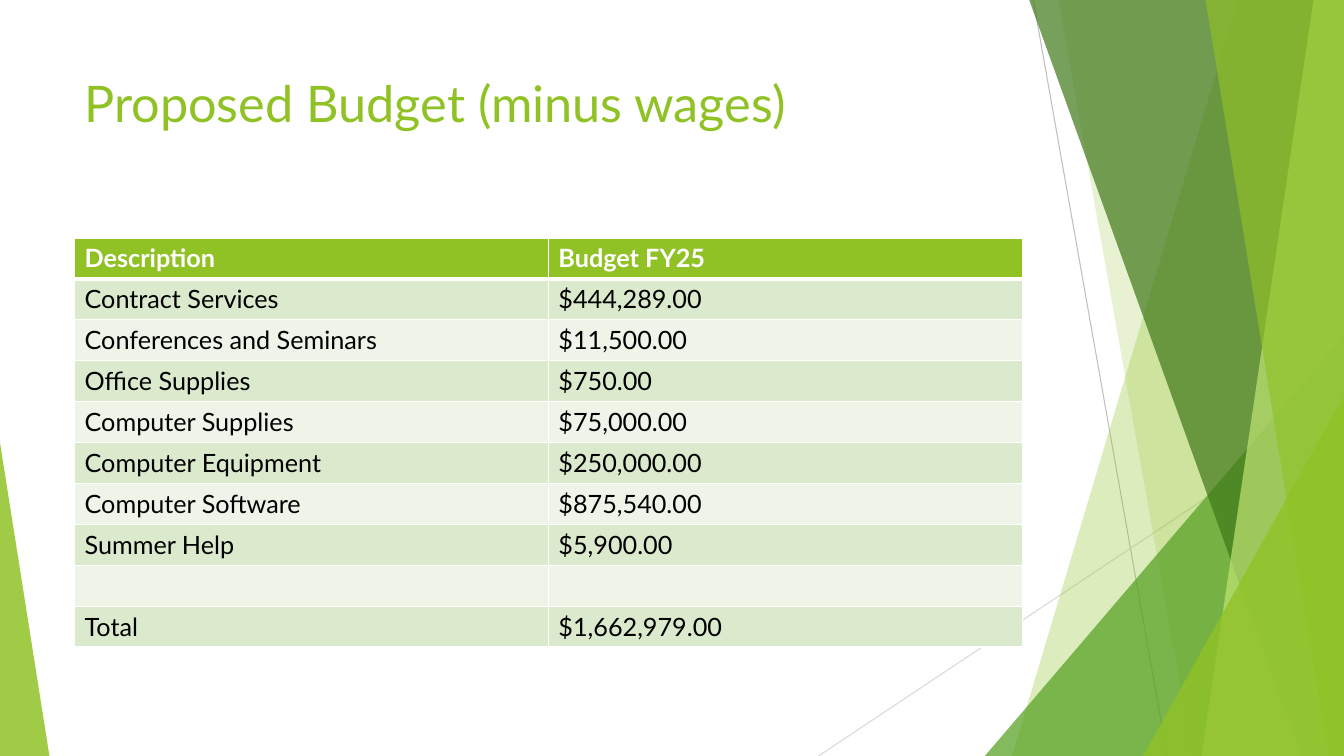
from dataclasses import dataclass

from pptx import Presentation
from pptx import util as u
from pptx.dml.color import RGBColor
from pptx.enum import shapes, text
from pptx.oxml import ns, xmlchemy


@dataclass(frozen=True)
class Theme:
    font: str = "Lato"
    title_size: float = 36
    body_size: float = 18
    hairline: float = 0.75
    rule: float = 1
    header_rule: float = 3
    accent: str = "90C226"
    leaf: str = "54A021"
    forest: str = "3F7819"
    lime: str = "C0E474"
    dark_gray: str = "BFBFBF"
    light_gray: str = "D9D9D9"
    white: str = "FFFFFF"
    black: str = "000000"
    bands: tuple = ("DBE9CD", "EEF4E8")


class SlideBuilder:
    """Draws on one slide; every place and size is a percentage of the slide."""

    def __init__(self, deck, theme):
        self.deck, self.theme = deck, theme
        self.slide = deck.slides.add_slide(deck.slide_layouts[6])
        self.items = self.slide.shapes

    def x(self, share):
        return round(self.deck.slide_width * share / 100)

    def y(self, share):
        return round(self.deck.slide_height * share / 100)

    def box(self, left, top, width, height):
        return self.x(left), self.y(top), self.x(width), self.y(height)

    def paint(self, facet, color, opacity):
        facet.shadow.inherit = False
        facet.fill.solid()
        facet.fill.fore_color.rgb = RGBColor.from_string(color)
        facet.line.fill.background()
        tint = facet.element.spPr.find(".//" + ns.qn("a:srgbClr"))
        alpha = xmlchemy.OxmlElement("a:alpha")
        alpha.set("val", str(opacity * 1000))
        tint.append(alpha)

    def band(self, top_left, bottom_left, color, opacity):
        """Full-height facet with a slanted left side, reaching the right edge."""
        outline = self.items.build_freeform(self.x(top_left), 0)
        corners = [(100, 0), (100, 100), (bottom_left, 100)]
        outline.add_line_segments([(self.x(h), self.y(v)) for h, v in corners])
        self.paint(outline.convert_to_shape(), color, opacity)

    def corner(self, left, top, width, apex, color, opacity):
        """Triangle standing on the bottom edge; apex 0 is left, 1 is right."""
        facet = self.items.add_shape(shapes.MSO_SHAPE.ISOSCELES_TRIANGLE,
                                     *self.box(left, top, width, 100 - top))
        facet.adjustments[0] = apex
        self.paint(facet, color, opacity)

    def line(self, start, end, color):
        ray = self.items.add_connector(shapes.MSO_CONNECTOR.STRAIGHT,
                                       self.x(start[0]), self.y(start[1]),
                                       self.x(end[0]), self.y(end[1]))
        ray.line.color.rgb = RGBColor.from_string(color)
        ray.line.width = u.Pt(self.theme.hairline)
        ray.element.spPr.append(xmlchemy.OxmlElement("a:effectLst"))

    def put_text(self, frame, words, size, color, bold=False):
        paragraph = frame.paragraphs[0]
        paragraph.alignment = text.PP_ALIGN.LEFT
        font = paragraph.font
        if words:
            run = paragraph.add_run()
            run.text = words
            font = run.font
            font.color.rgb = RGBColor.from_string(color)
        look = {"name": self.theme.font, "size": u.Pt(size), "bold": bold}
        for key, value in look.items():
            setattr(font, key, value)

    def title(self, words, *place):
        frame = self.items.add_textbox(*self.box(*place)).text_frame
        layout = {"word_wrap": True, "vertical_anchor": text.MSO_ANCHOR.TOP}
        for key, value in layout.items():
            setattr(frame, key, value)
        self.put_text(frame, words, self.theme.title_size, self.theme.accent)

    def border(self, cell, widths):
        """Add white cell borders; widths run left, right, top, bottom."""
        properties = cell._tc.get_or_add_tcPr()
        for place, (side, width) in enumerate(zip("LRTB", widths)):
            edge = xmlchemy.OxmlElement(f"a:ln{side}")
            edge.set("w", str(u.Pt(width)))
            fill = xmlchemy.OxmlElement("a:solidFill")
            tint = xmlchemy.OxmlElement("a:srgbClr")
            tint.set("val", self.theme.white)
            fill.append(tint)
            edge.append(fill)
            properties.insert(place, edge)

    def table(self, rows, *place):
        theme = self.theme
        grid = self.items.add_table(len(rows), len(rows[0]),
                                    *self.box(*place)).table
        for r, row in enumerate(rows):
            header = r == 0
            fill = theme.accent if header else theme.bands[(r - 1) % 2]
            top = theme.header_rule if r == 1 else theme.rule
            bottom = theme.header_rule if header else theme.rule
            for c, words in enumerate(row):
                cell = grid.cell(r, c)
                cell.fill.solid()
                cell.fill.fore_color.rgb = RGBColor.from_string(fill)
                self.border(cell, (theme.rule, theme.rule, top, bottom))
                self.put_text(cell.text_frame, words, theme.body_size,
                              theme.white if header else theme.black, header)


BUDGET = [
    ("Description", "Budget FY25"),
    ("Contract Services", "$444,289.00"),
    ("Conferences and Seminars", "$11,500.00"),
    ("Office Supplies", "$750.00"),
    ("Computer Supplies", "$75,000.00"),
    ("Computer Equipment", "$250,000.00"),
    ("Computer Software", "$875,540.00"),
    ("Summer Help", "$5,900.00"),
    ("", ""),
    ("Total", "$1,662,979.00"),
]


def main():
    deck = Presentation()
    deck.slide_width, deck.slide_height = u.Inches(13.33), u.Inches(7.5)
    theme = Theme()
    page = SlideBuilder(deck, theme)

    page.line((76.88, 0), (86.85, 100), theme.dark_gray)
    page.line((100, 53.73), (60.9, 100), theme.light_gray)
    page.band(92.1, 75.3, theme.accent, 30)
    page.band(78.75, 88.73, theme.accent, 20)
    page.corner(73.28, 44.4, 26.72, 1, theme.leaf, 72)
    page.band(76.58, 96.83, theme.forest, 70)
    page.band(97.73, 89.4, theme.lime, 70)
    page.band(89.7, 98.85, theme.accent, 65)
    page.corner(85.05, 52.4, 14.95, 1, theme.accent, 80)
    page.corner(0, 58.53, 3.68, 0, theme.accent, 85)

    page.title("Proposed Budget (minus wages)", 5.55, 8.93, 70.5, 19.2)
    page.table(BUDGET, 5.55, 31.47, 70.5, 54.13)
    deck.save("out.pptx")


if __name__ == "__main__":
    main()
